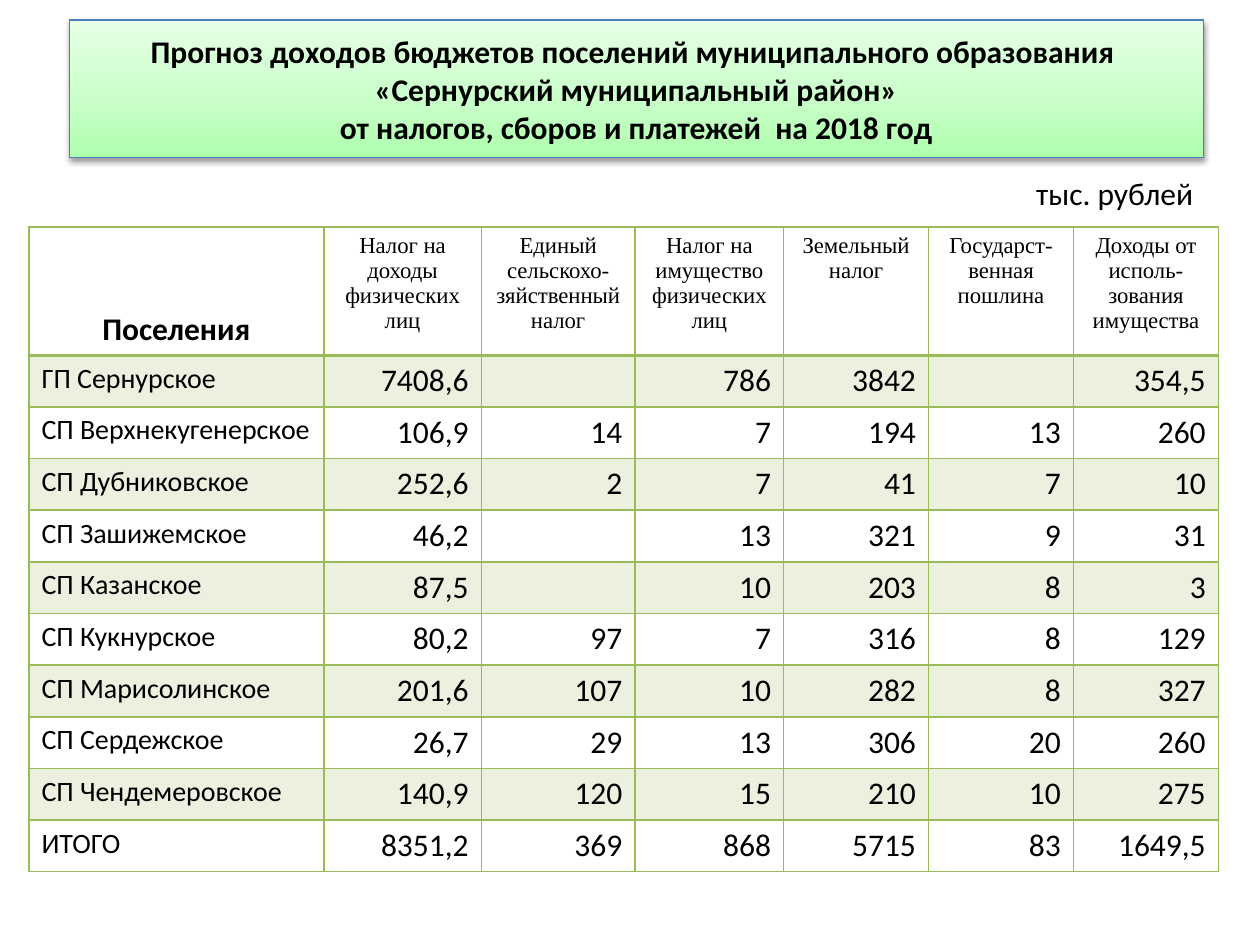
from copy import deepcopy
from dataclasses import dataclass

from lxml.etree import SubElement
from pptx import Presentation
from pptx.dml.color import RGBColor
from pptx.enum.shapes import MSO_SHAPE
from pptx.enum.text import MSO_ANCHOR, PP_ALIGN
from pptx.oxml.ns import qn
from pptx.util import Inches, Pt


@dataclass(frozen=True)
class Theme:
    font: str = "Calibri"
    header_font: str = "Times New Roman"
    text: str = "000000"
    title_line: str = "4B7EBC"
    title_gradient: tuple = ("AFFFAF", "CEFFCE", "E7FFE7")
    grid: str = "9BBB59"
    band: str = "EBF1DE"
    main_size: int = 18
    name_size: int = 16
    header_size: int = 13


THEME = Theme()
TITLE = (
    "Прогноз доходов бюджетов поселений муниципального образования  "
    "«Сернурский муниципальный район»\v"
    "от налогов, сборов и платежей  на 2018 год"
)
HEADERS = [
    "Поселения",
    "Налог на доходы физических лиц",
    "Единый сельскохо-зяйственный налог",
    "Налог на имущество физических лиц",
    "Земельный налог",
    "Государст-венная пошлина",
    "Доходы от исполь-зования имущества",
]
INCOME = [
    ("ГП Сернурское", "7408,6", "", "786", "3842", "", "354,5"),
    ("СП Верхнекугенерское", "106,9", "14", "7", "194", "13", "260"),
    ("СП Дубниковское", "252,6", "2", "7", "41", "7", "10"),
    ("СП Зашижемское", "46,2", "", "13", "321", "9", "31"),
    ("СП Казанское", "87,5", "", "10", "203", "8", "3"),
    ("СП Кукнурское", "80,2", "97", "7", "316", "8", "129"),
    ("СП Марисолинское", "201,6", "107", "10", "282", "8", "327"),
    ("СП Сердежское", "26,7", "29", "13", "306", "20", "260"),
    ("СП Чендемеровское", "140,9", "120", "15", "210", "10", "275"),
    ("ИТОГО", "8351,2", "369", "868", "5715", "83", "1649,5"),
]
COLUMN_WIDTHS = [2.34, 1.25, 1.22, 1.18, 1.15, 1.15, 1.15]
HEADER_HEIGHT = 1.02
ROW_HEIGHT = 0.41


def color(value):
    return RGBColor.from_string(value)


def write(frame, text, size, align, font=THEME.font, bold=False):
    frame.word_wrap = True
    frame.text = text
    for para in frame.paragraphs:
        para.alignment = align
        para.font.size = Pt(size)
        for span in para.runs:
            span.font.name = font
            span.font.size = Pt(size)
            span.font.bold = bold
            span.font.color.rgb = color(THEME.text)


def fill_gradient(shape, colors):
    """Fill upward with three evenly spaced colours."""
    shape.fill.gradient()
    shape.fill.gradient_angle = 90
    stop_list = shape._element.spPr.find(".//" + qn("a:gsLst"))
    stop_list.insert(1, deepcopy(stop_list[0]))
    for index, (stop, value) in enumerate(zip(shape.fill.gradient_stops, colors)):
        stop.position = index / 2
        stop.color.rgb = color(value)


def add_shadow(shape):
    shape.shadow.inherit = False
    effects = shape._element.spPr.find(qn("a:effectLst"))
    shadow = SubElement(
        effects, qn("a:outerShdw"), blurRad=str(Pt(3.1)), dist=str(Pt(1.6)),
        dir="5400000", rotWithShape="0",
    )
    black = SubElement(shadow, qn("a:srgbClr"), val="000000")
    SubElement(black, qn("a:alpha"), val="38000")


def add_title(page):
    box = page.shapes.add_shape(
        MSO_SHAPE.RECTANGLE, Inches(0.55), Inches(0.16), Inches(9), Inches(1.09)
    )
    fill_gradient(box, THEME.title_gradient)
    box.line.color.rgb = color(THEME.title_line)
    box.line.width = Pt(0.75)
    add_shadow(box)
    box.text_frame.vertical_anchor = MSO_ANCHOR.MIDDLE
    write(box.text_frame, TITLE, THEME.main_size, PP_ALIGN.CENTER, bold=True)


def add_unit_note(page):
    box = page.shapes.add_textbox(
        Inches(7.73), Inches(1.33), Inches(2.11), Inches(0.4)
    )
    box.text_frame.margin_right = Inches(0.37)
    write(box.text_frame, "тыс. рублей", THEME.main_size, PP_ALIGN.RIGHT)


def set_borders(cell, top, bottom):
    properties = cell._tc.get_or_add_tcPr()
    for side, width in (("L", 1), ("R", 1), ("T", top), ("B", bottom)):
        line = SubElement(properties, qn(f"a:ln{side}"), w=str(Pt(width)))
        solid = SubElement(line, qn("a:solidFill"))
        SubElement(solid, qn("a:srgbClr"), val=THEME.grid)


def write_cell(cell, text, row, column):
    frame = cell.text_frame
    if row == 0 and column == 0:
        cell.vertical_anchor = MSO_ANCHOR.BOTTOM
        write(frame, text, THEME.main_size, PP_ALIGN.CENTER, bold=True)
    elif row == 0:
        write(frame, text, THEME.header_size, PP_ALIGN.CENTER, THEME.header_font)
    elif column == 0:
        write(frame, text, THEME.name_size, PP_ALIGN.LEFT)
    else:
        write(frame, text, THEME.main_size, PP_ALIGN.RIGHT)


def add_income_table(page):
    rows = [HEADERS, *INCOME]
    height = HEADER_HEIGHT + ROW_HEIGHT * len(INCOME)
    table = page.shapes.add_table(
        len(rows), len(HEADERS), Inches(0.23), Inches(1.8),
        Inches(sum(COLUMN_WIDTHS)), Inches(height),
    ).table
    table.first_row = False
    table.horz_banding = False
    for column, width in zip(table.columns, COLUMN_WIDTHS):
        column.width = Inches(width)
    for row, values in enumerate(rows):
        table.rows[row].height = Inches(ROW_HEIGHT if row else HEADER_HEIGHT)
        for column, text in enumerate(values):
            cell = table.cell(row, column)
            set_borders(cell, 2 if row == 1 else 1, 2 if row == 0 else 1)
            if row % 2:
                cell.fill.solid()
                cell.fill.fore_color.rgb = color(THEME.band)
            else:
                cell.fill.background()
            write_cell(cell, text, row, column)


def main():
    deck = Presentation()
    deck.slide_width = Inches(10)
    deck.slide_height = Inches(7.5)
    page = deck.slides.add_slide(deck.slide_layouts[6])
    add_title(page)
    add_income_table(page)
    add_unit_note(page)
    deck.save("out.pptx")


if __name__ == "__main__":
    main()
